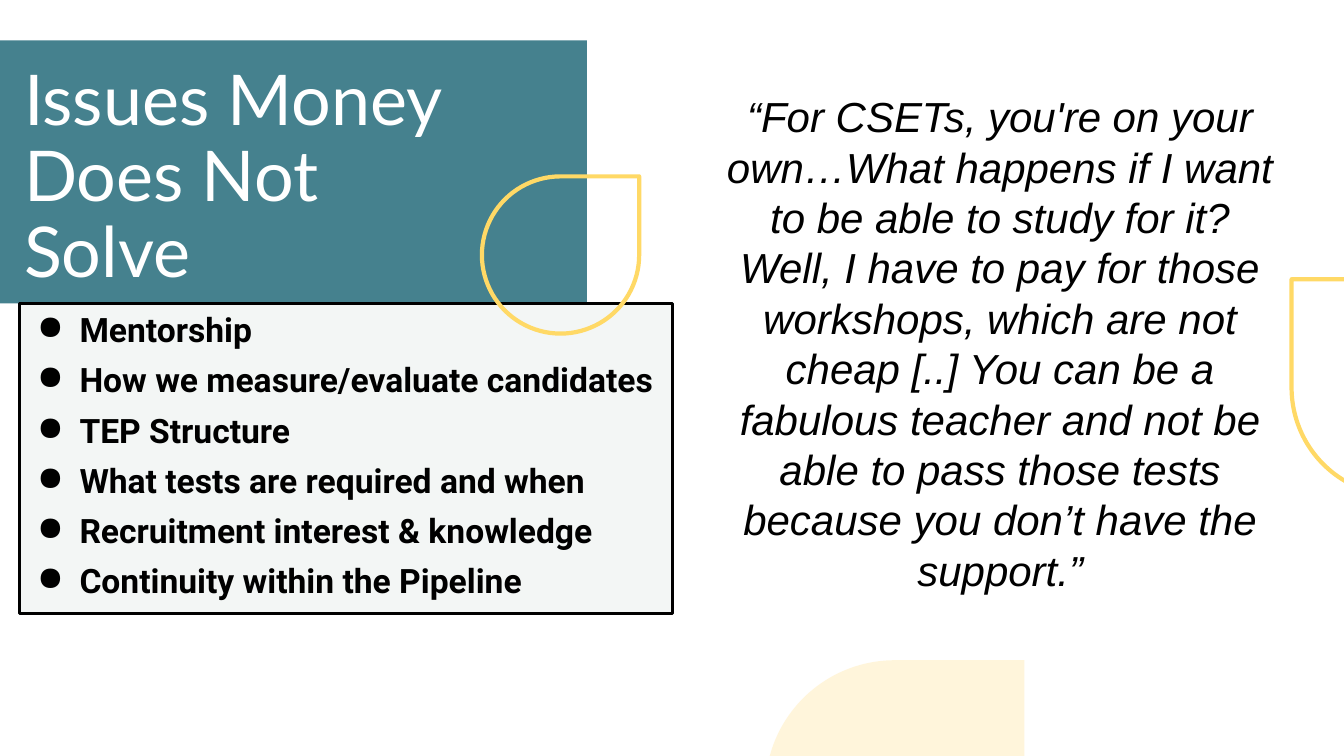
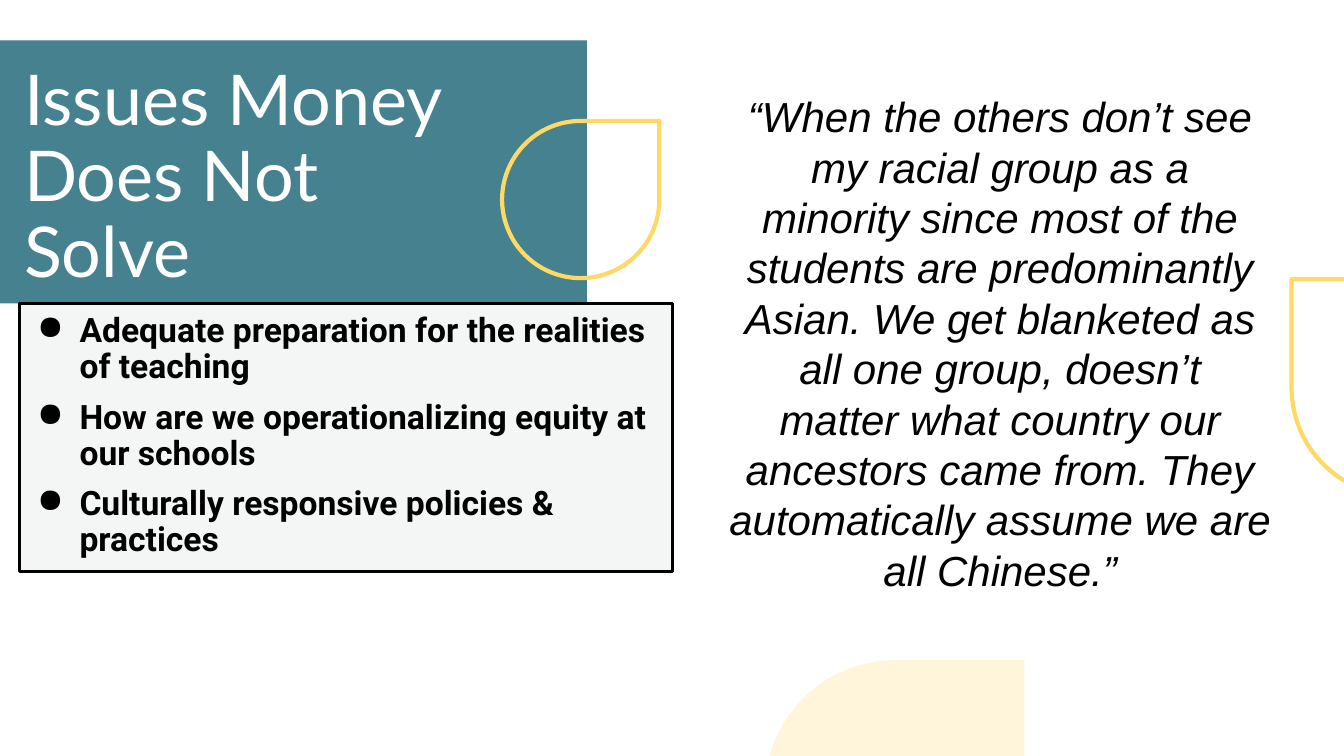
from dataclasses import dataclass

from lxml import etree
from pptx import Presentation
from pptx.dml.color import RGBColor
from pptx.enum import shapes, text
from pptx.oxml.ns import qn
from pptx.util import Inches, Pt


@dataclass(frozen=True)
class Theme:
    teal: str = "45818E"
    cream: str = "FFF2CC"
    gold: str = "FFD966"
    panel: str = "F3F6F5"
    black: str = "000000"
    white: str = "FFFFFF"
    title_size: int = 50
    quote_size: int = 30
    bullet_size: int = 24
    title_font: str = "Lato"
    quote_font: str = "Arial"
    bullet_font: str = "Roboto"


THEME = Theme()
TITLE = "Issues Money Does Not Solve"
SLIDES = [
    {
        "issues": [
            "Mentorship",
            "How we measure/evaluate candidates",
            "TEP Structure",
            "What tests are required and when",
            "Recruitment interest & knowledge",
            "Continuity within the Pipeline",
        ],
        "quote": [
            "“For CSETs, you're on your own…What happens if I want to be able "
            "to study for it? Well, I have to pay for those workshops, which are "
            "not cheap [..] You can be a fabulous teacher and not be able to pass "
            "those tests because you don’t have the support.”",
        ],
        "panel_height": 3.08,
        "drop_at": (4.78, 1.75),
    },
    {
        "issues": [
            "Adequate preparation for the realities of teaching",
            "How are we operationalizing equity at our schools",
            "Culturally responsive policies & practices",
        ],
        "quote": [
            "“When the others don’t see my racial group as a",
            "minority since most of the students are predominantly",
            "Asian. We get blanketed as all one group, doesn’t",
            "matter what country our ancestors came from. They",
            "automatically assume we are all Chinese.”",
        ],
        "panel_height": 2.66,
        "drop_at": (4.98, 1.2),
    },
]


def rgb(color):
    return RGBColor.from_string(color)


def add_shape(slide, kind, box, fill=None, opacity=None, line=None, width=3, rotation=0):
    shape = slide.shapes.add_shape(kind, *map(Inches, box))
    shape.shadow.inherit = False
    shape.rotation = rotation
    if fill:
        shape.fill.solid()
        shape.fill.fore_color.rgb = rgb(fill)
        if opacity:
            color = shape.fill._xPr.find(qn("a:solidFill"))[0]
            etree.SubElement(color, qn("a:alpha"), val=str(opacity * 1000))
    else:
        shape.fill.background()
    if line:
        shape.line.color.rgb = rgb(line)
        shape.line.width = Pt(width)
    else:
        shape.line.fill.background()
    return shape


def add_bullet(paragraph, color):
    properties = paragraph._p.get_or_add_pPr()
    properties.set("marL", str(Inches(0.5)))
    properties.set("indent", str(Inches(-0.42)))
    bullet_color = etree.SubElement(properties, qn("a:buClr"))
    etree.SubElement(bullet_color, qn("a:srgbClr"), val=color)
    etree.SubElement(properties, qn("a:buChar"), char="●")


def write_text(shape, lines, *, font, size, color, bold=False, italic=False,
               align=text.PP_ALIGN.LEFT, spacing=1.0, gap=0, bullets=False, inset=0.1):
    frame = shape.text_frame
    frame.word_wrap = True
    frame.vertical_anchor = text.MSO_ANCHOR.TOP
    frame.margin_left = frame.margin_right = Inches(0.1)
    frame.margin_top = frame.margin_bottom = Inches(inset)
    for index, line in enumerate(lines):
        paragraph = frame.add_paragraph() if index else frame.paragraphs[0]
        paragraph.alignment = align
        paragraph.line_spacing = spacing
        paragraph.space_before = Pt(gap if index else 0)
        if bullets:
            add_bullet(paragraph, color)
        run = paragraph.add_run()
        run.text = line
        run.font.name = font
        run.font.size = Pt(size)
        run.font.bold = bold
        run.font.italic = italic
        run.font.color.rgb = rgb(color)


def add_text(slide, box, lines, **style):
    write_text(slide.shapes.add_textbox(*map(Inches, box)), lines, **style)


def add_frame(slide):
    """Draw the title band, the title and the two edge teardrops."""
    teardrop = shapes.MSO_SHAPE.TEAR
    add_shape(slide, shapes.MSO_SHAPE.RECTANGLE, (0, 0.4, 5.82, 2.61), fill=THEME.teal)
    add_shape(slide, teardrop, (7.59, 6.55, 2.57, 2.57), fill=THEME.cream, opacity=70)
    add_shape(slide, teardrop, (12.81, 2.77, 2.15, 2.15), line=THEME.gold, rotation=270)
    add_text(slide, (0.14, 0.6, 4.84, 1.91), [TITLE], font=THEME.title_font,
             size=THEME.title_size, color=THEME.white, spacing=0.9, inset=0.05)


def add_issue_slide(presentation, content):
    slide = presentation.slides.add_slide(presentation.slide_layouts[6])
    add_frame(slide)
    add_text(slide, (7.11, 0.8, 5.62, 5.25), content["quote"], font=THEME.quote_font,
             size=THEME.quote_size, color=THEME.black, italic=True,
             align=text.PP_ALIGN.CENTER)
    panel = add_shape(slide, shapes.MSO_SHAPE.RECTANGLE,
                      (0.19, 3.01, 6.48, content["panel_height"]),
                      fill=THEME.panel, line=THEME.black, width=2.25)
    write_text(panel, content["issues"], font=THEME.bullet_font, size=THEME.bullet_size,
               color=THEME.black, bold=True, spacing=0.9, gap=10, bullets=True)
    add_shape(slide, shapes.MSO_SHAPE.TEAR, (*content["drop_at"], 1.56, 1.56),
              line=THEME.gold)


def main():
    presentation = Presentation()
    presentation.slide_width = Inches(13.33)
    presentation.slide_height = Inches(7.5)
    for content in SLIDES:
        add_issue_slide(presentation, content)
    presentation.save("out.pptx")


if __name__ == "__main__":
    main()
